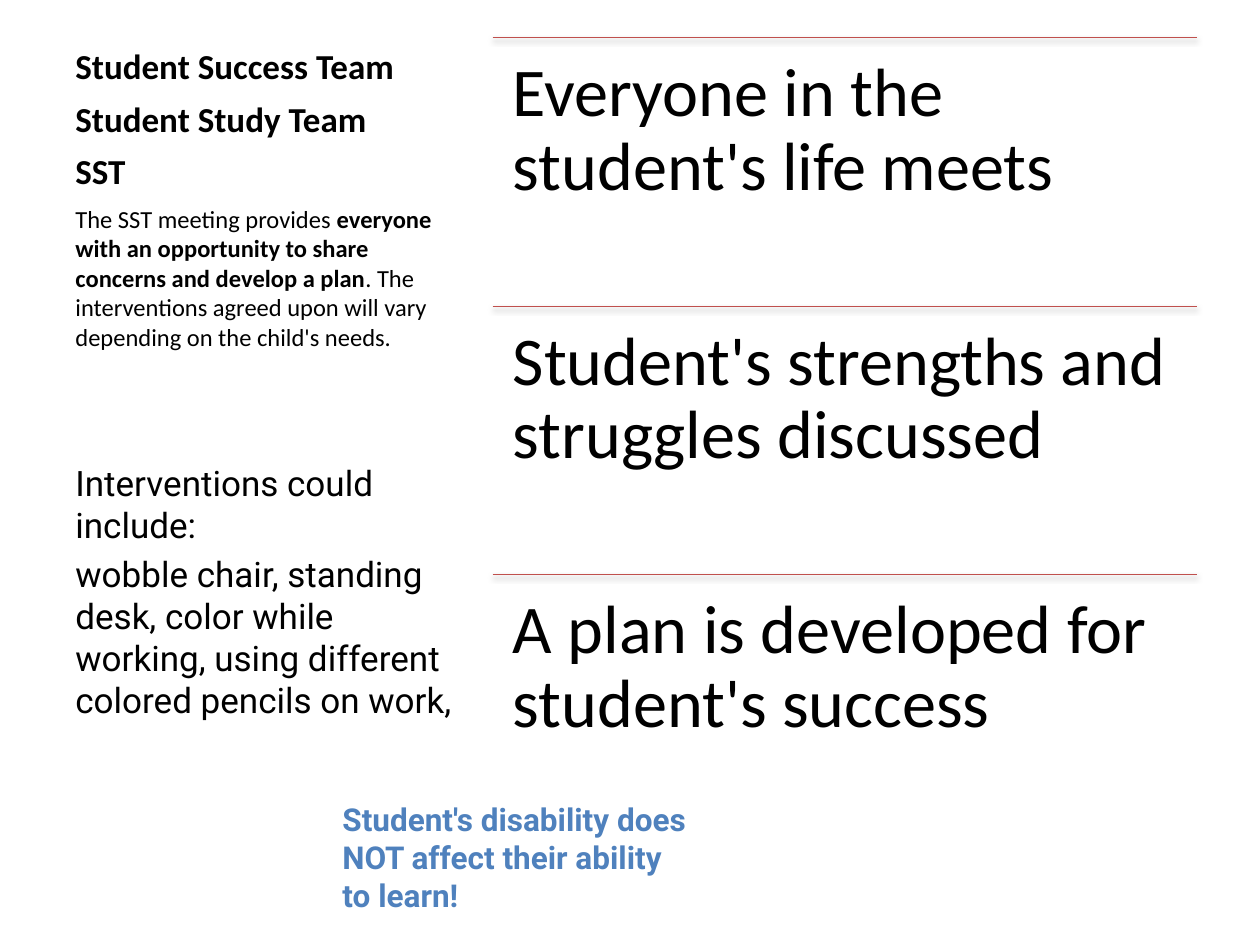
from lxml.etree import SubElement
from pptx import Presentation
from pptx.dml.color import RGBColor
from pptx.enum.shapes import MSO_CONNECTOR
from pptx.enum.text import MSO_ANCHOR
from pptx.oxml.ns import qn
from pptx.util import Inches, Pt

HUES = {"text": "000000", "rule": "C0504D", "note": "4F81BD"}
WIDE, HIGH = 10, 7.5
EDGE, TOP = 0.5, 0.3
LEFT = 3.29
SPLIT = 3.91
ROW = 2.13
HEAD = 1.27

TITLE = ["Student Success Team", "Student Study Team", "SST"]
INTRO = [
    ("The SST meeting provides ", False),
    ("everyone with an opportunity to share concerns and develop a plan", True),
    (". The interventions agreed upon will vary depending on the child's needs.", False),
]
IDEAS = [
    ("Interventions could include:", 63),
    ("wobble chair, standing desk, color while working, "
     "using different colored pencils on work,", 4),
]
STEPS = [
    "Everyone in the student's life meets",
    "Student's strengths and struggles discussed",
    "A plan is developed for student's success",
]
NOTE = "Student's disability does NOT affect their ability to learn!"


def add_frame(shapes, box, inset=None):
    """Add a wrapping text box and return its text frame."""
    frame = shapes.add_textbox(*map(Inches, box)).text_frame
    frame.word_wrap = True
    if inset is not None:
        frame.margin_left = frame.margin_right = Inches(inset)
        frame.margin_top = frame.margin_bottom = Inches(inset)
    return frame


def next_line(frame):
    """Return the empty first paragraph, or a new one."""
    first = frame.paragraphs[0]
    return frame.add_paragraph() if first.runs else first


def set_font(line, size, face="Calibri", hue="text", bold=False):
    font = line.font
    font.size, font.name = Pt(size), face
    font.color.rgb = RGBColor.from_string(HUES[hue])
    if bold:
        font.bold = True


def add_shade(line):
    """Give a rule its soft shadow, falling straight down."""
    effects = SubElement(line._element.spPr, qn("a:effectLst"))
    shade = SubElement(effects, qn("a:outerShdw"), blurRad=str(Pt(3.1)),
                       dist=str(Pt(1.8)), dir="5400000", rotWithShape="0")
    color = SubElement(shade, qn("a:srgbClr"), val="000000")
    SubElement(color, qn("a:alpha"), val="35000")


def draw_title(shapes, box):
    frame = add_frame(shapes, box)
    frame.vertical_anchor = MSO_ANCHOR.BOTTOM
    for text in TITLE:
        line = next_line(frame)
        line.add_run().text = text
        line.space_after = Pt(6)
        set_font(line, 20, bold=True)


def draw_body(shapes, box):
    frame = add_frame(shapes, box)
    intro = next_line(frame)
    for text, bold in INTRO:
        run = intro.add_run()
        run.text, run.font.bold = text, bold
    set_font(intro, 14)
    for text, gap in IDEAS:
        line = next_line(frame)
        line.add_run().text = text
        line.space_before = Pt(gap)
        set_font(line, 20, "Roboto")


def draw_steps(shapes, box):
    """Stack the steps in equal rows, each under a rule."""
    left, top, width, height = box
    row = height / len(STEPS)
    group = shapes.add_group_shape().shapes
    for i, text in enumerate(STEPS):
        y = top + i * row
        rule = group.add_connector(MSO_CONNECTOR.STRAIGHT, Inches(left), Inches(y),
                                   Inches(left + width), Inches(y))
        rule.line.color.rgb = RGBColor.from_string(HUES["rule"])
        rule.line.width = Pt(0.75)
        add_shade(rule)
        line = next_line(add_frame(group, (left, y, width, row), 0.16))
        line.add_run().text = text
        line.line_spacing = 0.9
        set_font(line, 39)


def draw_note(shapes, box):
    line = next_line(add_frame(shapes, box))
    line.add_run().text = NOTE
    set_font(line, 18, "Roboto", "note", True)


def main():
    deck = Presentation()
    deck.slide_width, deck.slide_height = Inches(WIDE), Inches(HIGH)
    shapes = deck.slides.add_slide(deck.slide_layouts[6]).shapes
    tall = ROW * len(STEPS)
    draw_title(shapes, (EDGE, TOP, LEFT, HEAD))
    draw_body(shapes, (EDGE, TOP + HEAD, LEFT, tall - HEAD))
    draw_steps(shapes, (SPLIT, TOP, WIDE - EDGE - SPLIT, tall))
    draw_note(shapes, (2.62, 0.84 * HIGH, 0.3 * WIDE, 1.01))
    deck.save("out.pptx")


if __name__ == "__main__":
    main()
